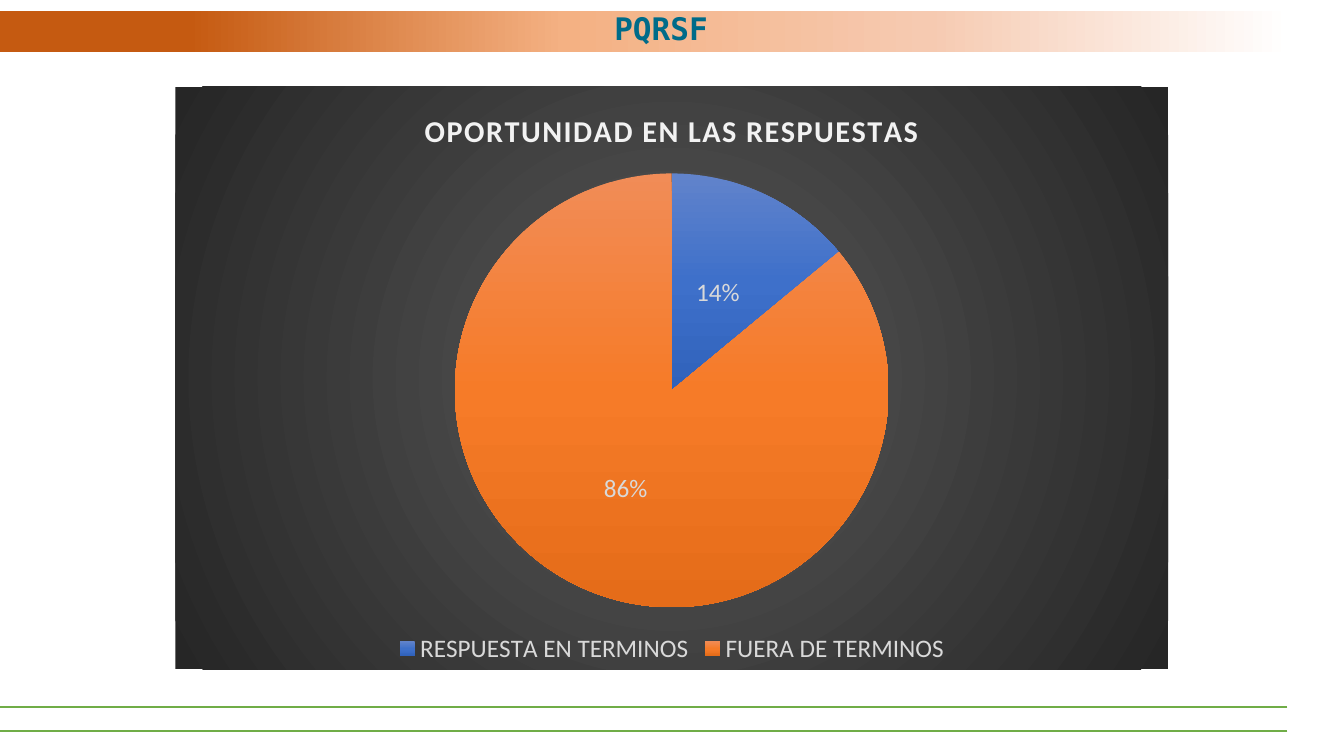
import pptx
import pptx.chart.data
import pptx.dml.color
import pptx.enum.chart
import pptx.enum.shapes
import pptx.enum.text
import pptx.oxml
import pptx.oxml.ns
import pptx.util
from pptx.util import Cm

COLORS = {
    "rule": "70AD47",
    "heading": "006B89",
    "chart_title": "F2F2F2",
    "chart_text": "D9D9D9",
}
BANNER_STOPS = [(14, "C55A11"), (42, "F4B183"), (69, "F6CAB1"), (96, "FFFFFF")]
CHART_STOPS = [(0, "595959"), (100, "262626")]
SLICES = [
    ("RESPUESTA EN TERMINOS", 14, [(0, "6183CB"), (50, "3E70CA"), (100, "3062BB")]),
    ("FUERA DE TERMINOS", 86, [(0, "F18C57"), (50, "F67B28"), (100, "E56C19")]),
]


def rgb(name):
    """Return the named colour."""
    return pptx.dml.color.RGBColor.from_string(COLORS[name])


def set_font(font, *, size, color, name="Calibri", bold=False):
    """Apply a complete font format."""
    font.size = pptx.util.Pt(size)
    font.name = name
    font.bold = bold
    font.color.rgb = rgb(color)


def add_gradient(properties, stops, angle=None):
    """Append a linear gradient, or a circular one when no angle is given."""
    stop_xml = "".join(
        f'<a:gs pos="{position * 1000}"><a:srgbClr val="{color}"/></a:gs>'
        for position, color in stops
    )
    if angle is None:
        direction = (
            '<a:path path="circle">'
            '<a:fillToRect l="50000" t="50000" r="50000" b="50000"/></a:path>'
        )
    else:
        direction = f'<a:lin ang="{angle * 60000}" scaled="0"/>'
    properties.append(pptx.oxml.parse_xml(
        f'<a:gradFill {pptx.oxml.ns.nsdecls("a")} rotWithShape="1">'
        f"<a:gsLst>{stop_xml}</a:gsLst>{direction}</a:gradFill>"
    ))


def add_rule(slide, top):
    """Draw a horizontal footer rule."""
    connector = slide.shapes.add_connector(
        pptx.enum.shapes.MSO_CONNECTOR.STRAIGHT, Cm(32.44), top, Cm(0), top
    )
    connector.line.color.rgb = rgb("rule")
    connector.line.width = pptx.util.Pt(1.5)
    connector._element.spPr.append(
        pptx.oxml.parse_xml(f'<a:effectLst {pptx.oxml.ns.nsdecls("a")}/>')
    )


def add_banner(slide, width):
    """Draw the fading band behind the heading."""
    shape = slide.shapes.add_shape(
        pptx.enum.shapes.MSO_SHAPE.RECTANGLE, Cm(0), Cm(0.28), width, Cm(1.02)
    )
    add_gradient(shape._element.spPr, BANNER_STOPS, angle=0)
    shape.line.fill.background()
    shape.shadow.inherit = False


def add_text(slide, text, left, top, width, height, **font_format):
    """Add a centred line of text in the given font format."""
    frame = slide.shapes.add_textbox(left, top, width, height).text_frame
    frame.word_wrap = True
    frame.vertical_anchor = pptx.enum.text.MSO_ANCHOR.MIDDLE
    paragraph = frame.paragraphs[0]
    paragraph.alignment = pptx.enum.text.PP_ALIGN.CENTER
    paragraph.line_spacing = 0.8
    run = paragraph.add_run()
    run.text = text
    set_font(run.font, **font_format)


def add_pie(slide, title, left, top, width, height):
    """Add the pie chart of response timeliness."""
    data = pptx.chart.data.CategoryChartData()
    data.categories = [name for name, _, _ in SLICES]
    data.add_series("Series 1", [value for _, value, _ in SLICES])
    chart = slide.shapes.add_chart(
        pptx.enum.chart.XL_CHART_TYPE.PIE, left, top, width, height, data
    ).chart
    set_font(chart.font, size=18, color="chart_text")

    background = pptx.oxml.parse_xml(f'<c:spPr {pptx.oxml.ns.nsdecls("c", "a")}/>')
    add_gradient(background, CHART_STOPS)
    chart._chartSpace.chart.addnext(background)

    chart.has_title = True
    chart.chart_title.include_in_layout = False
    run = chart.chart_title.text_frame.paragraphs[0].add_run()
    run.text = title
    set_font(run.font, size=21.6, color="chart_title", bold=True)
    run.font._element.set("spc", "100")

    chart.has_legend = True
    chart.legend.position = pptx.enum.chart.XL_LEGEND_POSITION.BOTTOM
    chart.legend.include_in_layout = False
    set_font(chart.legend.font, size=18, color="chart_text")

    plot = chart.plots[0]
    plot.vary_by_categories = True
    plot.has_data_labels = True
    labels = plot.data_labels
    labels.show_percentage = True
    labels.show_value = False
    labels.number_format = "0%"
    labels.number_format_is_linked = False
    labels.position = pptx.enum.chart.XL_LABEL_POSITION.CENTER
    set_font(labels.font, size=18, color="chart_text")

    for index, (_, _, stops) in enumerate(SLICES):
        point_format = plot.series[0].points[index].format
        add_gradient(point_format._element.get_or_add_spPr(), stops, angle=90)
        point_format.line.fill.background()


def main():
    """Build and save the slide."""
    presentation = pptx.Presentation()
    presentation.slide_width = Cm(33.87)
    presentation.slide_height = Cm(19.05)
    slide = presentation.slides.add_slide(presentation.slide_layouts[6])
    add_banner(slide, presentation.slide_width)
    for top in (Cm(18.42), Cm(17.81)):
        add_rule(slide, top)
    add_text(
        slide, "PQRSF ", Cm(1.07), Cm(0.28), Cm(31.65), Cm(1.02),
        size=22.2, color="heading", name="DejaVu Sans Mono", bold=True,
    )
    add_pie(
        slide, "OPORTUNIDAD EN LAS RESPUESTAS",
        Cm(4.42), Cm(2.18), Cm(25.02), Cm(14.68),
    )
    presentation.save("out.pptx")


if __name__ == "__main__":
    main()
